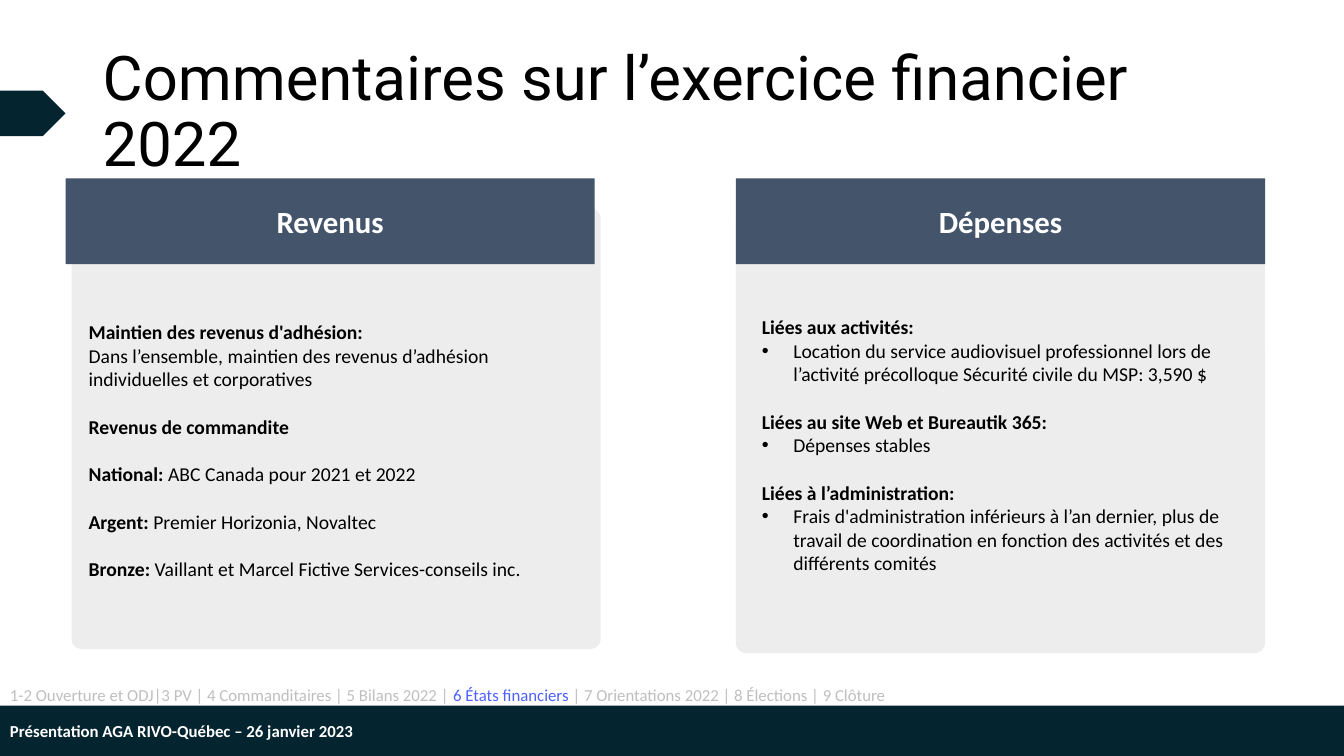
from lxml import etree
from pptx import Presentation
from pptx.dml.color import RGBColor
from pptx.enum.shapes import MSO_SHAPE
from pptx.enum.text import MSO_ANCHOR, MSO_AUTO_SIZE, PP_ALIGN
from pptx.oxml.ns import qn
from pptx.util import Pt

RECT = MSO_SHAPE.RECTANGLE
ROUND = MSO_SHAPE.ROUNDED_RECTANGLE
ARROW = MSO_SHAPE.PENTAGON
LEFT, CENTER = PP_ALIGN.LEFT, PP_ALIGN.CENTER
TOP, MIDDLE = MSO_ANCHOR.TOP, MSO_ANCHOR.MIDDLE
NO_FIT = MSO_AUTO_SIZE.NONE

BLACK = RGBColor(0, 0, 0)
WHITE = RGBColor(255, 255, 255)
NIGHT = RGBColor(0x04, 0x24, 0x30)
SLATE = RGBColor(0x44, 0x54, 0x6A)
STONE = RGBColor(0xD0, 0xCE, 0xCE)
FADED = RGBColor(0xBF, 0xBF, 0xBF)
ACCENT = RGBColor(0x4E, 0x61, 0xFF)

WIDTH, HEIGHT = 960, 540
CARD_W, CARD_H = 378, 314.6
HEAD_Y, HEAD_H = 127.4, 61.2
BODY_INSET = 32.9
GAP = 17.1
INDENT = 22.5


def write(par, text, font="Calibri", size=14, color=BLACK, bold=False):
    run = par.add_run()
    run.text = text
    run.font.name = font
    run.font.size = Pt(size)
    run.font.color.rgb = color
    run.font.bold = bold


class Deck:
    def __init__(self):
        self.file = Presentation()
        self.file.slide_width, self.file.slide_height = Pt(WIDTH), Pt(HEIGHT)
        self.slide = self.file.slides.add_slide(self.file.slide_layouts[5])

    def title(self, text, x, y, w, h):
        title = self.slide.shapes.title
        title.left, title.top, title.width, title.height = map(Pt, (x, y, w, h))
        frame = title.text_frame
        frame.auto_size, frame.word_wrap = NO_FIT, True
        frame.vertical_anchor = MIDDLE
        par = frame.paragraphs[0]
        par.alignment, par.line_spacing = LEFT, 0.9
        write(par, text, font="Roboto", size=44)

    def shape(self, kind, x, y, w, h, fill, alpha=None, round=None):
        box = self.slide.shapes.add_shape(kind, Pt(x), Pt(y), Pt(w), Pt(h))
        box.shadow.inherit = False
        box.line.fill.background()
        box.fill.solid()
        box.fill.fore_color.rgb = fill
        if alpha is not None:
            color = box.fill._xPr.find(".//" + qn("a:srgbClr"))
            etree.SubElement(color, qn("a:alpha"), val=str(alpha * 1000))
        if round is not None:
            box.adjustments[0] = round
        return box

    def label(self, box, text, align=LEFT, **style):
        frame = box.text_frame
        frame.word_wrap, frame.vertical_anchor = True, MIDDLE
        par = frame.paragraphs[0]
        par.alignment = align
        write(par, text, color=WHITE, bold=True, **style)

    def frame(self, x, y, w, h, inset=3.6):
        frame = self.slide.shapes.add_textbox(Pt(x), Pt(y), Pt(w), Pt(h)).text_frame
        frame.word_wrap, frame.vertical_anchor = True, TOP
        frame.margin_top = Pt(inset)
        return frame

    def body(self, x, y, w, h, rows):
        """Fill a box with rows of (bold text, plain text, gap above, bullet)."""
        frame = self.frame(x, y, w, h, BODY_INSET)
        for i, (strong, plain, gap, bullet) in enumerate(rows):
            par = frame.add_paragraph() if i else frame.paragraphs[0]
            par.space_before = Pt(gap)
            if bullet:
                props = par._p.get_or_add_pPr()
                props.set("marL", str(Pt(INDENT)))
                props.set("indent", str(-Pt(INDENT)))
                etree.SubElement(props, qn("a:buFont"), typeface="Arial")
                etree.SubElement(props, qn("a:buChar"), char="•")
            if strong:
                write(par, strong, bold=True)
            if plain:
                write(par, plain)


INCOME = [
    ("Maintien des revenus d'adhésion:", "", 0, False),
    ("", "Dans l’ensemble, maintien des revenus d’adhésion individuelles et corporatives", 0, False),
    ("Revenus de commandite", "", GAP, False),
    ("National: ", "ABC Canada pour 2021 et 2022", GAP, False),
    ("Argent: ", "Premier Horizonia, Novaltec", GAP, False),
    ("Bronze: ", "Vaillant et Marcel Fictive Services-conseils inc.", GAP, False),
]
COSTS = [
    ("Liées aux activités:", "", 0, False),
    ("", "Location du service audiovisuel professionnel lors de l’activité "
         "précolloque Sécurité civile du MSP: 3,590 $", 0, True),
    ("Liées au site Web et Bureautik 365:", "", GAP, False),
    ("", "Dépenses stables", 0, True),
    ("Liées à l’administration:", "", GAP, False),
    ("", "Frais d'administration inférieurs à l’an dernier, plus de travail de "
         "coordination en fonction des\u00a0activités et des différents comités", 0, True),
]
STEPS = [
    ("1-2 Ouverture et ODJ|3 PV | 4 Commanditaires | 5 Bilans 2022 | ", FADED),
    ("6 États financiers ", ACCENT),
    ("| 7 Orientations 2022 | 8 Élections | 9 Clôture", FADED),
]


def main():
    deck = Deck()
    deck.title("Commentaires sur l’exercice financier 2022", 66.2, 28.8, 828, 104.4)
    for x, y in ((525.6, 151.9), (51.1, 149)):
        deck.shape(ROUND, x, y, CARD_W, CARD_H, STONE, alpha=36, round=0.023)

    foot = deck.shape(RECT, 0, 504, WIDTH, 36, NIGHT)
    deck.label(foot, "Présentation AGA RIVO-Québec – 26 janvier 2023", size=12)
    steps = deck.frame(0, 485.3, WIDTH, 36).paragraphs[0]
    for text, color in STEPS:
        write(steps, text, size=12, color=color)

    deck.shape(ARROW, 0, 64.8, 46.8, 32.4, NIGHT)
    deck.body(56.2, 195.8, 359.3, 223.2, INCOME)
    deck.body(537.1, 192.2, 362.2, 252, COSTS)
    for x, text in ((46.8, "Revenus"), (525.6, "Dépenses")):
        head = deck.shape(ROUND, x, HEAD_Y, CARD_W, HEAD_H, SLATE, round=0)
        deck.label(head, text, align=CENTER, size=22)
    deck.file.save("out.pptx")


if __name__ == "__main__":
    main()
